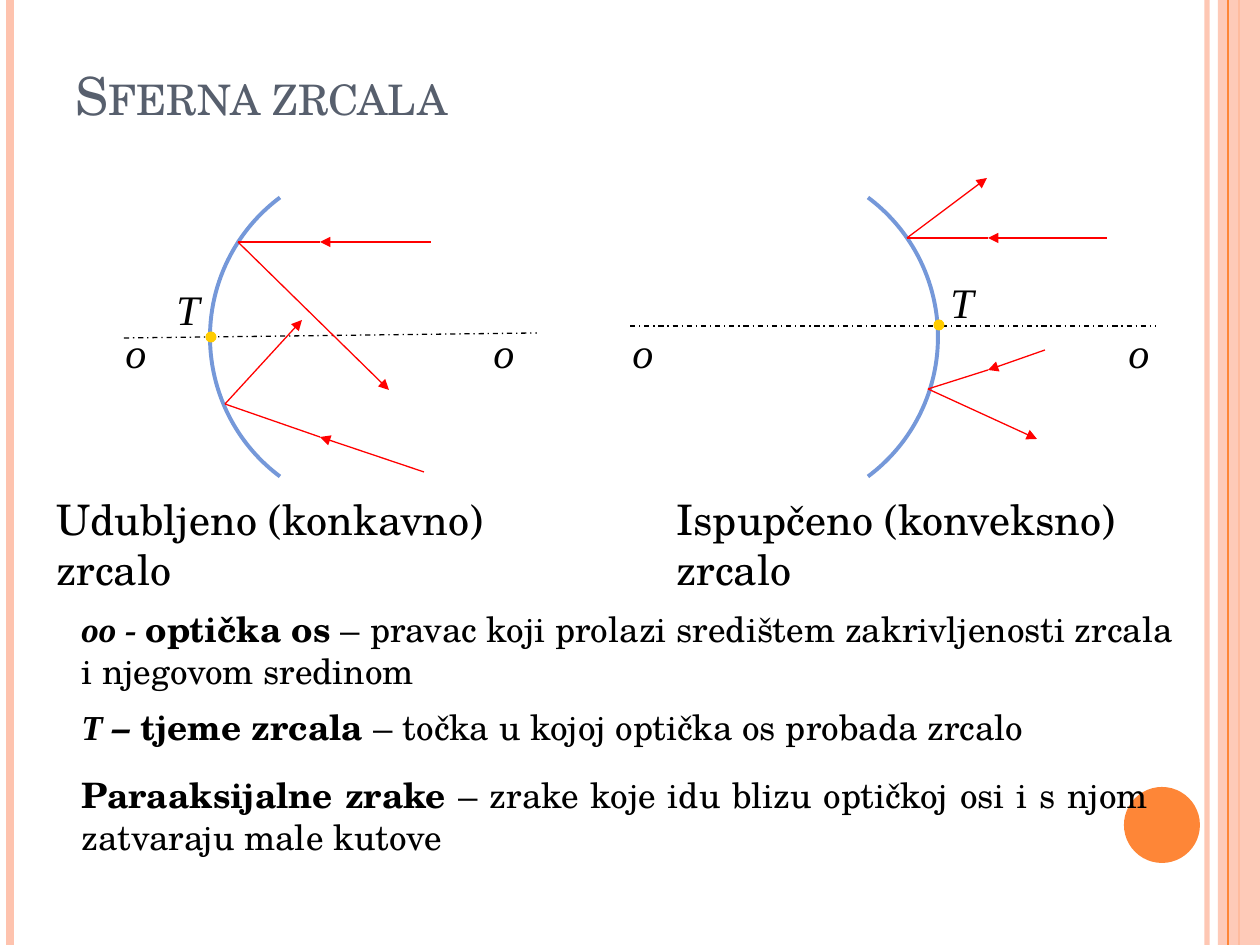
from lxml.etree import SubElement
from pptx import Presentation
from pptx.dml.color import RGBColor
from pptx.enum.dml import MSO_LINE
from pptx.enum.shapes import MSO_CONNECTOR, MSO_SHAPE
from pptx.enum.text import MSO_ANCHOR, PP_ALIGN
from pptx.oxml.ns import qn
from pptx.util import Inches, Pt

PIXELS_PER_INCH = 126
SERIF = "TeX Gyre Schola"
TIMES = "Times New Roman"
BLACK = RGBColor(0x00, 0x00, 0x00)
SLATE = RGBColor(0x57, 0x5F, 0x6D)
PEACH = RGBColor(0xFE, 0xC3, 0xAE)
ORANGE = RGBColor(0xFE, 0x86, 0x37)
BLUE = RGBColor(0x75, 0x98, 0xD9)
RED = RGBColor(0xFF, 0x00, 0x00)
YELLOW = RGBColor(0xFF, 0xCC, 0x00)

MIRROR_RADIUS = 174
MIRROR_HALF_ANGLE = 53.3
ADJUSTMENT_PER_DEGREE = 0.6


def px(length):
    return Inches(length / PIXELS_PER_INCH)


def set_opacity(fill_parent, percent):
    color = fill_parent.find(".//" + qn("a:srgbClr"))
    SubElement(color, qn("a:alpha"), val=str(percent * 1000))


def add_line(slide, start, end, color, width=0.75, dash=None, arrow=False):
    line = slide.shapes.add_connector(MSO_CONNECTOR.STRAIGHT, *map(px, start + end))
    line.line.color.rgb = color
    line.line.width = Pt(width)
    if dash:
        line.line.dash_style = dash
    if arrow:
        SubElement(line.line._get_or_add_ln(), qn("a:tailEnd"), type="triangle")
    SubElement(line._element.spPr, qn("a:effectLst"))
    return line


def add_filled_shape(slide, kind, box, color):
    shape = slide.shapes.add_shape(kind, *map(px, box))
    shape.shadow.inherit = False
    shape.fill.solid()
    shape.fill.fore_color.rgb = color
    shape.line.fill.background()
    return shape


def add_dot(slide, center, diameter, color):
    left, top = (value - diameter / 2 for value in center)
    add_filled_shape(slide, MSO_SHAPE.OVAL, (left, top, diameter, diameter), color)


def add_mirror(slide, center, middle_angle):
    left, top = (value - MIRROR_RADIUS for value in center)
    size = 2 * MIRROR_RADIUS
    arc = slide.shapes.add_shape(MSO_SHAPE.ARC, *map(px, (left, top, size, size)))
    arc.shadow.inherit = False
    for index, offset in enumerate((-MIRROR_HALF_ANGLE, MIRROR_HALF_ANGLE)):
        arc.adjustments[index] = (middle_angle + offset) % 360 * ADJUSTMENT_PER_DEGREE
    arc.fill.background()
    arc.line.color.rgb = BLUE
    arc.line.width = Pt(2.25)


def add_text(slide, box, runs, size, color=BLACK, anchor=MSO_ANCHOR.TOP):
    frame = slide.shapes.add_textbox(*map(px, box)).text_frame
    frame.word_wrap = True
    frame.vertical_anchor = anchor
    paragraph = frame.paragraphs[0]
    paragraph.font.size = Pt(size)
    paragraph.font.color.rgb = color
    for text, font_name, bold, italic in runs:
        run = paragraph.add_run()
        run.text = text
        run.font.name = font_name
        run.font.bold = bold
        run.font.italic = italic
    return frame


def add_title(slide, text):
    frame = add_text(slide, (63, 38, 1029, 157), [(text, SERIF, False, False)], 30,
                     SLATE, MSO_ANCHOR.BOTTOM)
    frame.margin_bottom = px(69)
    frame.paragraphs[0].runs[0].font._element.set("cap", "small")


def add_symbol(slide, left, top, text):
    add_text(slide, (left, top, 49, 63), [(text, TIMES, False, True)], 24)


def add_ray(slide, source, arrow_tip, hit, reflected):
    add_line(slide, source, arrow_tip, RED, arrow=True)
    add_line(slide, arrow_tip, hit, RED)
    add_line(slide, hit, reflected, RED, arrow=True)


def add_decoration(slide):
    edge = add_line(slide, (1207, 0), (1207, 945), PEACH, 3)
    set_opacity(edge._element.spPr, 93)
    add_line(slide, (10, 0), (10, 945), PEACH, 4.5)
    add_line(slide, (1239, 0), (1239, 945), ORANGE, 1.5)
    band = add_filled_shape(slide, MSO_SHAPE.RECTANGLE, (1218, 0, 42, 945), PEACH)
    set_opacity(band._element.spPr, 87)
    add_line(slide, (1228, 0), (1228, 945), ORANGE)
    add_dot(slide, (1162, 825), 76, ORANGE)


def add_concave_mirror(slide):
    add_mirror(slide, (384, 337), 180)
    add_line(slide, (124, 338), (537, 333), BLACK, dash=MSO_LINE.DASH_DOT)
    add_dot(slide, (211, 337), 11, YELLOW)
    add_symbol(slide, 113, 320, "o")
    add_symbol(slide, 481, 320, "o")
    add_symbol(slide, 164, 277, "T")
    add_ray(slide, (431, 242), (320, 242), (238, 242), (389, 390))
    add_ray(slide, (424, 472), (320, 437), (225, 404), (302, 320))


def add_convex_mirror(slide):
    add_mirror(slide, (764, 337), 0)
    add_line(slide, (630, 326), (1156, 326), BLACK, dash=MSO_LINE.DASH_DOT)
    add_dot(slide, (939, 325), 11, YELLOW)
    add_symbol(slide, 620, 320, "o")
    add_symbol(slide, 1116, 320, "o")
    add_symbol(slide, 938, 270, "T")
    add_ray(slide, (1107, 238), (988, 238), (907, 238), (987, 178))
    add_ray(slide, (1045, 350), (988, 370), (928, 389), (1037, 439))


def add_captions(slide):
    for left, width, text in (
        (44, 558, "Udubljeno (konkavno) zrcalo"),
        (664, 574, "Ispupčeno (konveksno) zrcalo"),
    ):
        add_text(slide, (left, 512, width, 63), [(text, SERIF, False, False)], 24,
                 anchor=MSO_ANCHOR.MIDDLE)


def add_definitions(slide):
    add_text(slide, (69, 601, 1123, 97), [
        ("oo - ", TIMES, True, True),
        ("optička os ", SERIF, True, False),
        ("– pravac koji prolazi središtem zakrivljenosti zrcala i njegovom sredinom",
         SERIF, False, False),
    ], 20)
    add_text(slide, (69, 699, 982, 55), [
        ("T", TIMES, True, True),
        (" – ", SERIF, True, True),
        ("tjeme zrcala ", SERIF, True, False),
        ("– točka u kojoj optička os probada zrcalo", SERIF, False, False),
    ], 20)
    rays = add_text(slide, (69, 767, 1092, 97), [
        ("Paraaksijalne zrake ", SERIF, True, False),
        ("– zrake koje idu blizu optičkoj osi i s njom zatvaraju male kutove",
         SERIF, False, False),
    ], 20, anchor=MSO_ANCHOR.MIDDLE)
    rays.paragraphs[0].alignment = PP_ALIGN.JUSTIFY


def main():
    presentation = Presentation()
    presentation.slide_width = px(1260)
    presentation.slide_height = px(945)
    slide = presentation.slides.add_slide(presentation.slide_layouts[6])
    add_decoration(slide)
    add_title(slide, "Sferna zrcala")
    add_captions(slide)
    add_concave_mirror(slide)
    add_convex_mirror(slide)
    add_definitions(slide)
    presentation.save("out.pptx")


if __name__ == "__main__":
    main()
